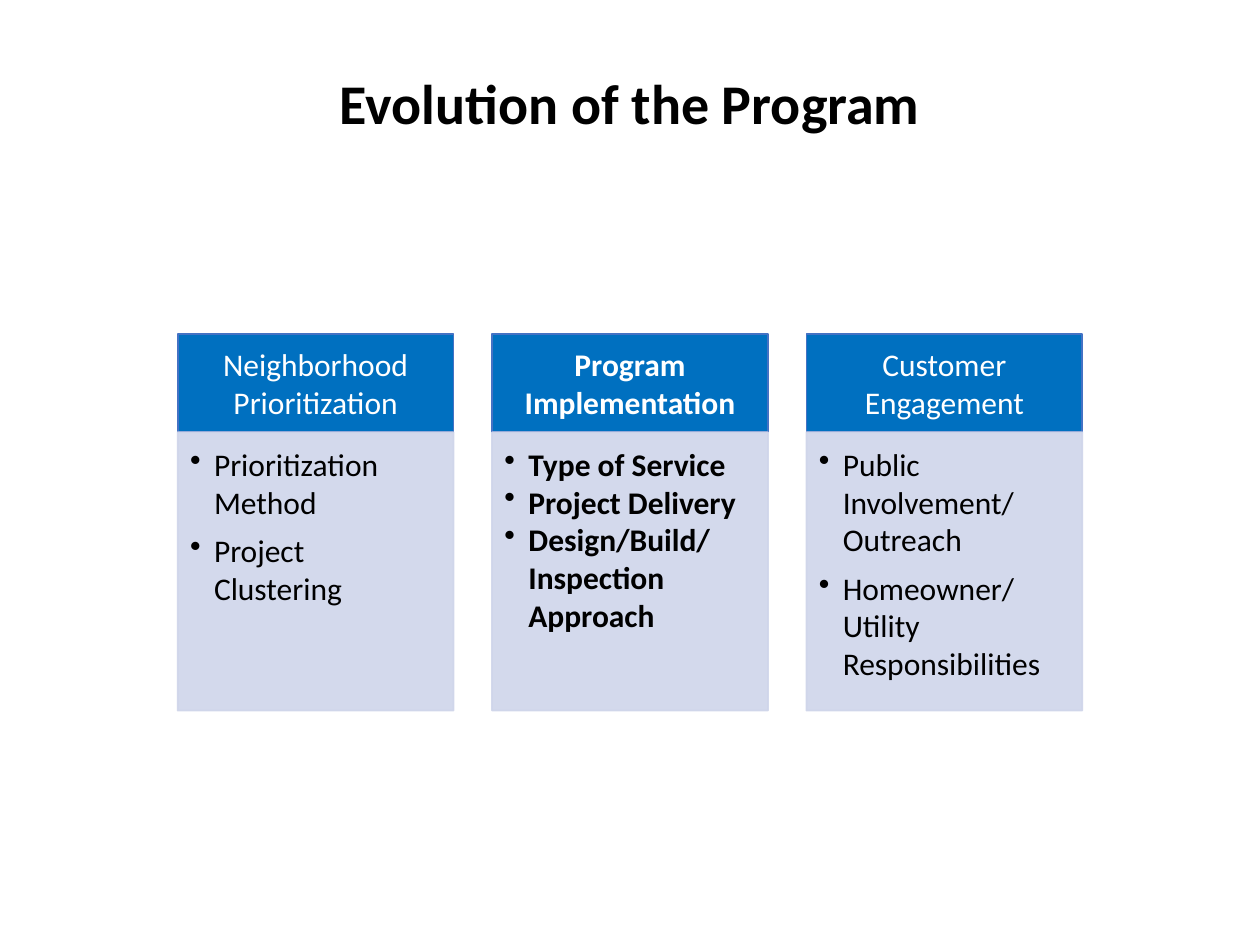
from dataclasses import dataclass

import pptx
import pptx.dml.color
import pptx.enum.shapes
import pptx.enum.text
import pptx.oxml
import pptx.oxml.ns
import pptx.util
from pptx.util import Inches

ALIGN = pptx.enum.text.PP_ALIGN
ANCHOR = pptx.enum.text.MSO_ANCHOR
LEFT, STEP, WIDTH = 1.41, 2.495, 2.19
TOP, HEAD, BODY = 2.65, 0.78, 2.21


@dataclass
class Column:
    title: str
    items: list[str]
    bold: bool = False
    gap: int = 6


def paint(form, color: str, alpha: int = 100) -> None:
    form.solid()
    form.fore_color.rgb = pptx.dml.color.RGBColor.from_string(color)
    if alpha < 100:
        tag = form.fore_color._xFill.find(pptx.oxml.ns.qn("a:srgbClr"))
        tag.append(pptx.oxml.parse_xml(
            f'<a:alpha {pptx.oxml.ns.nsdecls("a")} val="{alpha * 1000}"/>'))


def write(shape, lines: list[str], *, size: int = 18, color: str = "000000",
          bold: bool = False, align=ALIGN.CENTER, anchor=ANCHOR.MIDDLE,
          inset: tuple = (0.1, 0.05, 0.1, 0.05), gap: int = 0,
          space: float = 1.0, bullet: bool = False) -> None:
    frame = shape.text_frame
    frame.word_wrap = True
    frame.vertical_anchor = anchor
    (frame.margin_left, frame.margin_top,
     frame.margin_right, frame.margin_bottom) = map(Inches, inset)
    for index, line in enumerate(lines):
        para = frame.paragraphs[0] if index == 0 else frame.add_paragraph()
        para.text = line
        para.alignment = align
        para.line_spacing = space
        para.space_after = pptx.util.Pt(gap)
        if bullet:
            props = para._p.get_or_add_pPr()
            props.set("marL", str(Inches(0.19)))
            props.set("indent", str(Inches(-0.19)))
            props.append(pptx.oxml.parse_xml(
                f'<a:buChar {pptx.oxml.ns.nsdecls("a")} char="•"/>'))
        font = para.font
        font.name = "Calibri"
        font.size = pptx.util.Pt(size)
        font.bold = bold
        paint(font.fill, color)


def block(slide, left: float, top: float, height: float,
          fill: str, line: str, alpha: int = 100):
    shape = slide.shapes.add_shape(
        pptx.enum.shapes.MSO_SHAPE.RECTANGLE,
        Inches(left), Inches(top), Inches(WIDTH), Inches(height))
    shape.shadow.inherit = False
    paint(shape.fill, fill, alpha)
    paint(shape.line.fill, line, alpha)
    shape.line.width = pptx.util.Pt(1)
    return shape


def draw(slide, column: Column, left: float) -> None:
    head = block(slide, left, TOP, HEAD, "0070C0", "4472C4")
    write(head, [column.title], color="FFFFFF", bold=column.bold,
          inset=(0.14, 0.08, 0.14, 0.08), gap=6)
    body = block(slide, left, TOP + HEAD, BODY, "CFD5EA", "CFD5EA", 90)
    write(body, column.items, bold=column.bold, align=ALIGN.LEFT,
          anchor=ANCHOR.TOP, inset=(0.1, 0.1, 0.14, 0.16),
          gap=column.gap, bullet=True)


def main() -> None:
    deck = pptx.Presentation()
    deck.slide_width, deck.slide_height = Inches(10), Inches(7.5)
    slide = deck.slides.add_slide(deck.slide_layouts[6])
    title = slide.shapes.add_textbox(
        Inches(0.69), Inches(0.4), Inches(8.62), Inches(0.88))
    write(title, ["Evolution of the Program"], size=32, bold=True, space=0.9)
    columns = [
        Column("Neighborhood Prioritization",
               ["Prioritization Method", "Project  Clustering"]),
        Column("Program Implementation",
               ["Type of Service", "Project Delivery",
                "Design/Build/ Inspection Approach"], bold=True, gap=0),
        Column("Customer Engagement",
               ["Public Involvement/ Outreach",
                "Homeowner/ Utility Responsibilities"]),
    ]
    for index, column in enumerate(columns):
        draw(slide, column, LEFT + index * STEP)
    deck.save("out.pptx")


if __name__ == "__main__":
    main()
